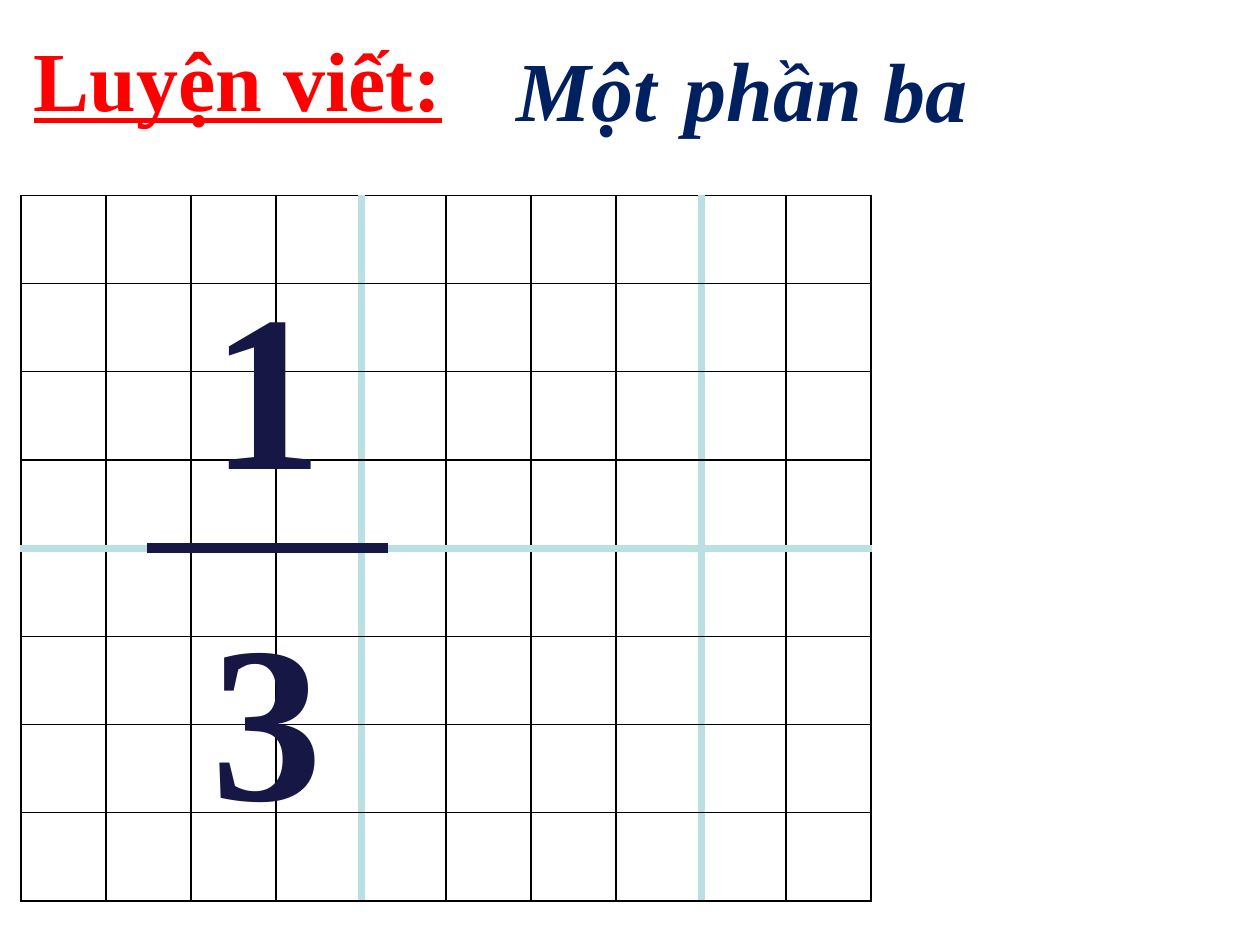
from lxml.etree import SubElement
from pptx import Presentation
from pptx.dml.color import RGBColor
from pptx.enum.shapes import MSO_CONNECTOR
from pptx.enum.text import MSO_ANCHOR, MSO_AUTO_SIZE, PP_ALIGN
from pptx.oxml.ns import qn
from pptx.util import Pt

COLORS = {
    "heading": "FF0000",
    "reading": "002060",
    "fraction": "171745",
    "paper": "FFFFFF",
    "grid": "000000",
    "guide": "BBE0E3",
}
ROWS, COLUMNS = 8, 10
GUIDE_ROWS, GUIDE_COLUMNS = {4}, {4, 8}


def write_text(box, text, color, **font_values):
    frame = box.text_frame
    for name, value in {"word_wrap": True, "auto_size": MSO_AUTO_SIZE.NONE,
                        "vertical_anchor": MSO_ANCHOR.TOP}.items():
        setattr(frame, name, value)
    paragraph = frame.paragraphs[0]
    paragraph.alignment = PP_ALIGN.LEFT
    run = paragraph.add_run()
    run.text = text
    for name, value in {"name": "Times New Roman", "bold": True, **font_values}.items():
        setattr(run.font, name, value)
    run.font.color.rgb = RGBColor.from_string(COLORS[color])


def draw_border(cell, side, is_guide):
    width = Pt(4.5) if is_guide else Pt(1)
    border = SubElement(cell._tc.get_or_add_tcPr(), qn(f"a:{side}"), w=str(width))
    fill = SubElement(border, qn("a:solidFill"))
    SubElement(fill, qn("a:srgbClr"), val=COLORS["guide" if is_guide else "grid"])


prs = Presentation()
prs.slide_width, prs.slide_height = Pt(720), Pt(540)
slide = prs.slides.add_slide(prs.slide_layouts[5])
shapes = slide.shapes

# Heading
heading = shapes.title
for name, value in {"left": 12, "top": 12, "width": 288, "height": 65.5}.items():
    setattr(heading, name, Pt(value))
write_text(heading, "Luyện viết:", "heading", size=Pt(48), underline=True)

# Writing grid with thick guide lines
grid_frame = shapes.add_table(ROWS, COLUMNS, Pt(12), Pt(111.6), Pt(486), Pt(403.2))
grid = grid_frame.table
grid.first_row = grid.horz_banding = False
for column in grid.columns:
    column.width = Pt(48.6)
for row in grid.rows:
    row.height = Pt(50.4)
for r in range(ROWS):
    for c in range(COLUMNS):
        cell = grid.cell(r, c)
        draw_border(cell, "lnL", c in GUIDE_COLUMNS)
        draw_border(cell, "lnR", c + 1 in GUIDE_COLUMNS)
        draw_border(cell, "lnT", r in GUIDE_ROWS)
        draw_border(cell, "lnB", r + 1 in GUIDE_ROWS)
        cell.fill.solid()
        cell.fill.fore_color.rgb = RGBColor.from_string(COLORS["paper"])

# Fraction: numerator, denominator and bar
for digit, top, width in [("1", 137.5, 121), ("3", 327, 114)]:
    box = shapes.add_textbox(Pt(114), Pt(top), Pt(width), Pt(161))
    write_text(box, digit, "fraction", size=Pt(127))

bar = shapes.add_connector(MSO_CONNECTOR.STRAIGHT, Pt(84), Pt(313.2), Pt(222), Pt(313.2))
bar.line.width = Pt(6)
bar.line.color.rgb = RGBColor.from_string(COLORS["fraction"])
SubElement(bar._element.spPr, qn("a:effectLst"))

# The fraction read aloud, word by word
for word, left, top, width in [("Một", 288, 18, 108), ("phần", 384, 18, 132), ("ba", 498, 18.7, 108)]:
    box = shapes.add_textbox(Pt(left), Pt(top), Pt(width), Pt(65.5))
    write_text(box, word, "reading", size=Pt(48), italic=True)

prs.save("out.pptx")
